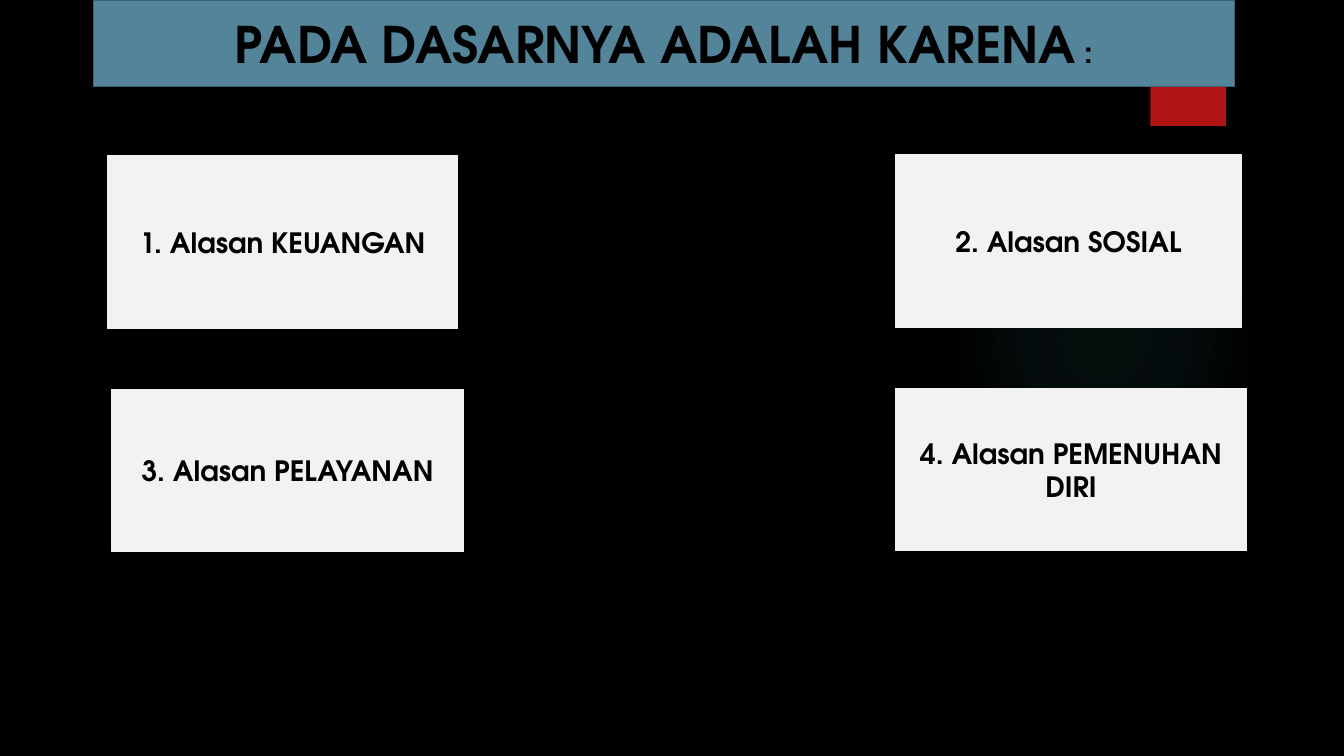
from dataclasses import dataclass

from pptx import Presentation
from pptx.dml.color import RGBColor
from pptx.enum.shapes import MSO_SHAPE
from pptx.enum.text import MSO_ANCHOR, MSO_AUTO_SIZE, PP_ALIGN
from pptx.oxml import parse_xml
from pptx.oxml.ns import nsdecls
from pptx.util import Inches, Pt

FONT = "TeX Gyre Adventor"
BLACK = RGBColor(0x00, 0x00, 0x00)
RED = RGBColor(0xB0, 0x15, 0x13)
PALE = RGBColor(0xF2, 0xF2, 0xF2)
BLUE = RGBColor(0x54, 0x84, 0x9A)
EDGE = RGBColor(0x3E, 0x62, 0x72)
TEAL = RGBColor(0x50, 0xB9, 0xC1)


@dataclass(frozen=True)
class Box:
    left: float
    top: float
    width: float
    height: float
    text: str = ""


CARDS = (
    Box(2.14, 3.09, 6.93, 3.42, "1. Alasan KEUANGAN"),
    Box(17.76, 3.07, 6.87, 3.42, "2. Alasan SOSIAL"),
    Box(2.22, 7.73, 6.97, 3.22, "3. Alasan PELAYANAN"),
    Box(17.76, 7.71, 6.97, 3.22, "4. Alasan PEMENUHAN DIRI"),
)
TITLE = Box(1.86, 0, 22.62, 1.72, "PADA DASARNYA ADALAH KARENA")


def add_box(slide, kind: MSO_SHAPE, box: Box):
    shape = slide.shapes.add_shape(
        kind, Inches(box.left), Inches(box.top), Inches(box.width), Inches(box.height)
    )
    shape.shadow.inherit = False
    shape.line.fill.background()
    return shape


def paint(shape, fill: RGBColor, edge: RGBColor) -> None:
    shape.fill.solid()
    shape.fill.fore_color.rgb = fill
    shape.line.color.rgb = edge
    shape.line.width = Pt(1.5)


def style(run, size: float) -> None:
    run.font.name = FONT
    run.font.size = Pt(size)
    run.font.bold = True
    run.font.color.rgb = BLACK


def set_text(shape, text: str, size: float):
    frame = shape.text_frame
    frame.text = text
    frame.word_wrap = True
    frame.auto_size = MSO_AUTO_SIZE.NONE
    frame.vertical_anchor = MSO_ANCHOR.MIDDLE
    line = frame.paragraphs[0]
    line.alignment = PP_ALIGN.CENTER
    style(line.runs[0], size)
    return line


def add_glow(slide) -> None:
    glow = add_box(slide, MSO_SHAPE.OVAL, Box(18.82, 3.67, 6.17, 6.17))
    glow.fill.background()
    stops = "".join(
        f'<a:gs pos="{pos * 1000}"><a:srgbClr val="{TEAL}">'
        f'<a:alpha val="{alpha * 1000}"/></a:srgbClr></a:gs>'
        for pos, alpha in ((0, 7), (36, 6), (69, 0))
    )
    blend = parse_xml(
        f'<a:gradFill {nsdecls("a")}><a:gsLst>{stops}</a:gsLst><a:path path="circle">'
        '<a:fillToRect l="50000" t="50000" r="50000" b="50000"/></a:path></a:gradFill>'
    )
    props = glow._element.spPr
    props.replace(props.find("{*}noFill"), blend)


def add_tab(slide) -> None:
    tab = add_box(slide, MSO_SHAPE.RECTANGLE, Box(22.82, 0, 1.5, 2.5))
    tab.fill.solid()
    tab.fill.fore_color.rgb = RED
    props = tab._element.spPr
    props.replace(
        props.find("{*}effectLst"),
        parse_xml(
            f'<a:effectLst {nsdecls("a")}><a:outerShdw blurRad="{Pt(3)}" dist="{Pt(2)}" '
            f'dir="5400000"><a:srgbClr val="{BLACK}"><a:alpha val="45000"/></a:srgbClr>'
            "</a:outerShdw></a:effectLst>"
        ),
    )


def add_card(slide, box: Box) -> None:
    card = add_box(slide, MSO_SHAPE.RECTANGLE, box)
    paint(card, PALE, PALE)
    set_text(card, box.text, 40)


def place_title(slide, box: Box) -> None:
    title = slide.shapes.title
    title.left, title.top = Inches(box.left), Inches(box.top)
    title.width, title.height = Inches(box.width), Inches(box.height)
    paint(title, BLUE, EDGE)
    line = set_text(title, box.text, 72)
    colon = line.add_run()
    colon.text = " :"
    style(colon, 44)
    slide.shapes._spTree.append(title._element)


def main() -> None:
    deck = Presentation()
    deck.slide_width, deck.slide_height = Inches(26.66), Inches(15)
    slide = deck.slides.add_slide(deck.slide_layouts[5])
    slide.background.fill.solid()
    slide.background.fill.fore_color.rgb = BLACK
    add_glow(slide)
    add_tab(slide)
    for card in CARDS:
        add_card(slide, card)
    place_title(slide, TITLE)
    deck.save("out.pptx")


if __name__ == "__main__":
    main()
